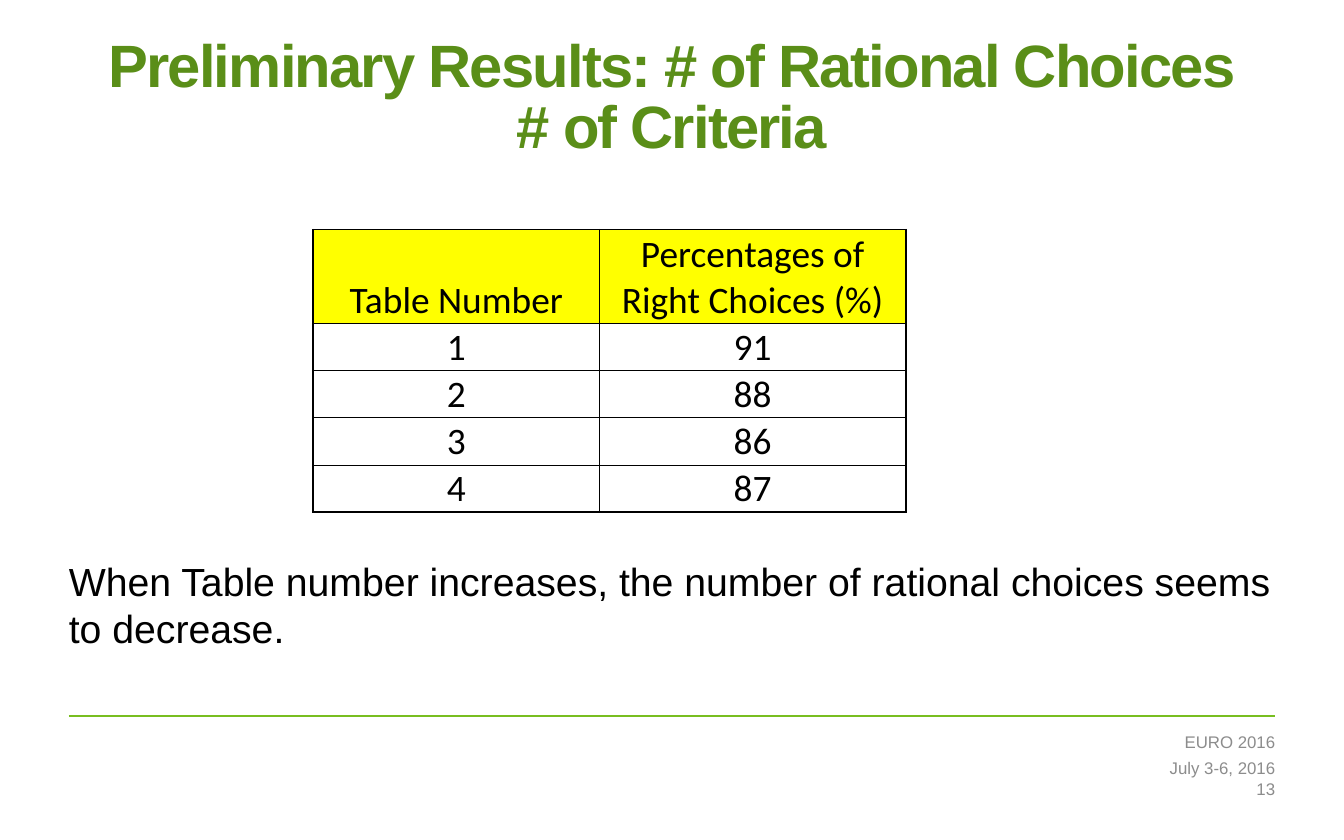
import lxml.etree
import pptx
import pptx.dml.color
import pptx.enum.shapes
import pptx.enum.text
import pptx.oxml.ns
import pptx.util

Cm = pptx.util.Cm
Pt = pptx.util.Pt
RGBColor = pptx.dml.color.RGBColor
Align = pptx.enum.text.PP_ALIGN
Anchor = pptx.enum.text.MSO_ANCHOR

BLACK = RGBColor(0x00, 0x00, 0x00)
WHITE = RGBColor(0xFF, 0xFF, 0xFF)
YELLOW = RGBColor(0xFF, 0xFF, 0x00)
TITLE_GREEN = RGBColor(0x5A, 0x8E, 0x18)
RULE_GREEN = RGBColor(0x78, 0xBE, 0x20)
GREY = RGBColor(0x8C, 0x8C, 0x8C)

MARGIN = Cm(1.3)
CONTENT_WIDTH = Cm(22.8)
RESULTS = [
    ("Table Number", "Percentages of Right Choices (%)"),
    ("1", "91"),
    ("2", "88"),
    ("3", "86"),
    ("4", "87"),
]
FOOTER_LINES = [("EURO 2016", 0.56), ("July 3-6, 2016", 0.43), ("13", 0.38)]


def add_child(parent, tag, **attributes):
    """Append a DrawingML element to the parent and return it."""
    return lxml.etree.SubElement(parent, pptx.oxml.ns.qn(tag), attributes)


def place(shape, left, top, width, height):
    """Move a shape into the given box."""
    shape.left, shape.top, shape.width, shape.height = left, top, width, height


def prepare_frame(shape, anchor):
    """Wrap the text of a shape, without margins or autofit, and return its frame."""
    frame = shape.text_frame
    frame.word_wrap = True
    frame.auto_size = pptx.enum.text.MSO_AUTO_SIZE.NONE
    frame.vertical_anchor = anchor
    frame.margin_left = frame.margin_top = frame.margin_right = frame.margin_bottom = 0
    return frame


def style_paragraph(paragraph, size, color, alignment, name="Arial", bold=False):
    """Set the alignment and font of a paragraph."""
    paragraph.alignment = alignment
    paragraph.font.size = Pt(size)
    paragraph.font.name = name
    paragraph.font.bold = bold
    paragraph.font.color.rgb = color


def fill_title(slide, left, top, width, height):
    """Write the two-line heading in the title placeholder."""
    title = slide.shapes.title
    place(title, left, top, width, height)
    frame = prepare_frame(title, Anchor.TOP)
    frame.text = "Preliminary Results: # of Rational Choices\v# of Criteria"
    paragraph = frame.paragraphs[0]
    style_paragraph(paragraph, 32, TITLE_GREEN, Align.CENTER, bold=True)
    paragraph.line_spacing = 0.85
    for run in paragraph.runs:
        run.font._element.set("spc", "-100")


def fill_body(slide, left, top, width, height):
    """Write the conclusion in the body placeholder, without a bullet."""
    body = slide.placeholders[1]
    place(body, left, top, width, height)
    frame = prepare_frame(body, Anchor.TOP)
    frame.text = ("When Table number increases, the number of rational choices "
                  "seems to decrease.")
    paragraph = frame.paragraphs[0]
    paragraph.space_before = Pt(0)
    properties = paragraph._p.get_or_add_pPr()
    properties.set("marL", "0")
    properties.set("indent", "0")
    add_child(properties, "a:buNone")
    style_paragraph(paragraph, 21, BLACK, Align.LEFT)


def set_borders(cell, widths):
    """Draw black cell borders, with widths in points by side."""
    properties = cell._tc.get_or_add_tcPr()
    for index, (side, width) in enumerate(widths.items()):
        line = lxml.etree.Element(pptx.oxml.ns.qn(f"a:ln{side}"), w=str(Pt(width)))
        fill = add_child(line, "a:solidFill")
        add_child(fill, "a:srgbClr", val=str(BLACK))
        properties.insert(index, line)


def add_results_table(slide, left, top, width, height):
    """Add the table of right choices, its header twice as high as a row."""
    last_row, last_column = len(RESULTS) - 1, len(RESULTS[0]) - 1
    table = slide.shapes.add_table(
        len(RESULTS), len(RESULTS[0]), left, top, width, height).table
    table.horz_banding = False
    table.columns[0].width = Cm(5.41)
    table.columns[1].width = width - Cm(5.41)
    row_height = height // (len(RESULTS) + 1)
    for r, values in enumerate(RESULTS):
        table.rows[r].height = row_height * (2 if r == 0 else 1)
        for c, value in enumerate(values):
            cell = table.cell(r, c)
            cell.text = value
            cell.vertical_anchor = Anchor.BOTTOM
            cell.margin_left = cell.margin_right = cell.margin_top = Cm(0.02)
            cell.margin_bottom = 0
            cell.fill.solid()
            cell.fill.fore_color.rgb = YELLOW if r == 0 else WHITE
            style_paragraph(cell.text_frame.paragraphs[0], 20, BLACK,
                            Align.CENTER, "Calibri")
            set_borders(cell, {
                "L": 1 if c == 0 else 0.5,
                "R": 1 if c == last_column else 0.5,
                "T": 1 if r == 0 else 0.5,
                "B": 1 if r == last_row else 0.5,
            })


def add_footer(slide, left, top, width):
    """Add the green rule with the right-aligned footer lines below it."""
    rule = slide.shapes.add_connector(
        pptx.enum.shapes.MSO_CONNECTOR.STRAIGHT, left, top, left + width, top)
    rule.line.color.rgb = RULE_GREEN
    rule.line.width = Pt(1)
    add_child(rule._element.spPr, "a:effectLst")
    text_width = Cm(10.06)
    line_top = top + Cm(0.2)
    for text, line_height in FOOTER_LINES:
        box = slide.shapes.add_textbox(
            left + width - text_width, line_top, text_width, Cm(line_height))
        frame = prepare_frame(box, Anchor.MIDDLE)
        frame.text = text
        style_paragraph(frame.paragraphs[0], 9, GREY, Align.RIGHT)
        line_top += Cm(line_height)


def main():
    """Build the results slide and save it."""
    presentation = pptx.Presentation()
    presentation.slide_width = Cm(25.4)
    presentation.slide_height = Cm(15.88)
    slide = presentation.slides.add_slide(presentation.slide_layouts[1])
    fill_title(slide, MARGIN, Cm(0.74), CONTENT_WIDTH, Cm(2.4))
    fill_body(slide, MARGIN, Cm(10.54), CONTENT_WIDTH, Cm(2.2))
    add_results_table(slide, Cm(5.92), Cm(4.34), Cm(11.2), Cm(5.34))
    add_footer(slide, MARGIN, Cm(13.54), CONTENT_WIDTH)
    presentation.save("out.pptx")


if __name__ == "__main__":
    main()
